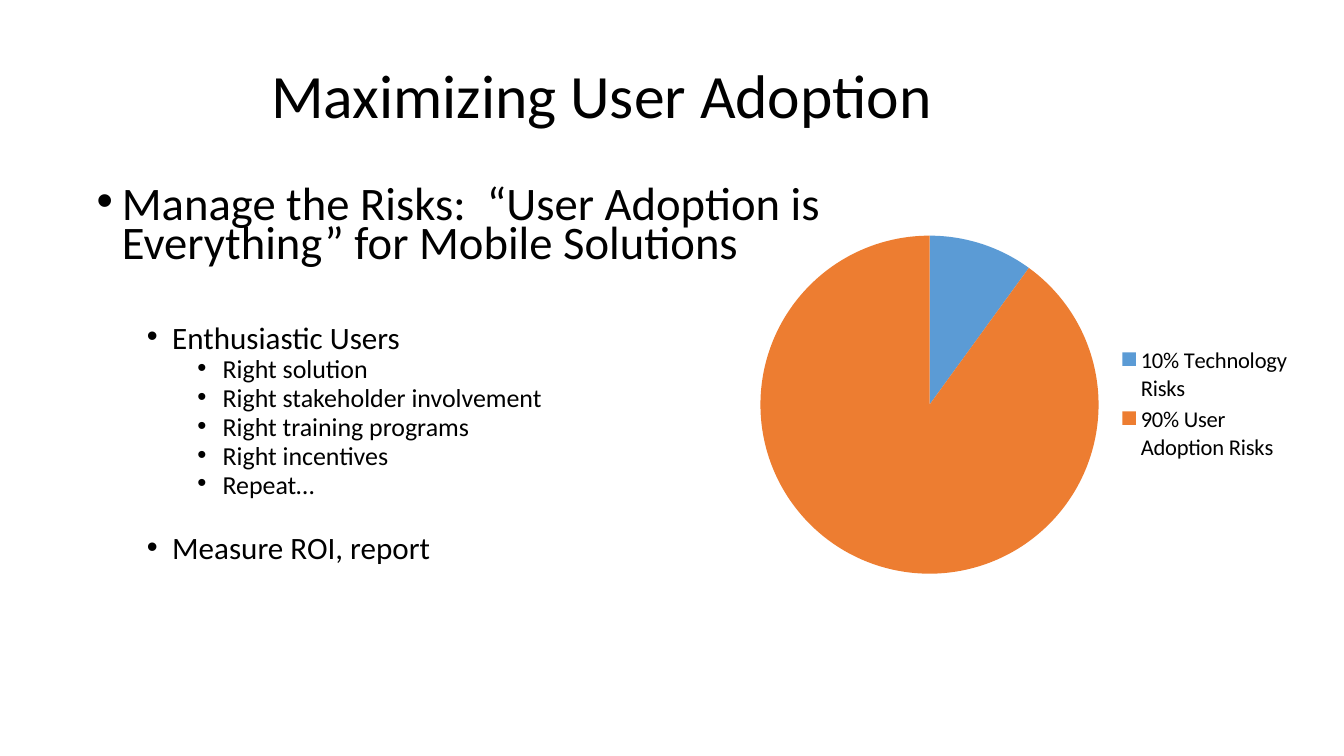
from pptx import Presentation
from pptx.chart.data import CategoryChartData
from pptx.dml.color import RGBColor
from pptx.enum.chart import XL_CHART_TYPE, XL_LEGEND_POSITION
from pptx.enum.text import MSO_ANCHOR
from pptx.oxml.ns import qn
from pptx.util import Inches, Pt
from lxml import etree

PIE = XL_CHART_TYPE.PIE
RIGHT = XL_LEGEND_POSITION.RIGHT
MIDDLE = MSO_ANCHOR.MIDDLE
FONT = "Calibri"
BLACK = "000000"

# Level: text size, space before (points)
LEVELS = [(33.3, 10), (22.2, 5), (18.5, 5)]

# Level, text, extra space before (points)
POINTS = [
    (0, "Manage the Risks:  “User Adoption is Everything” for Mobile Solutions", 0),
    (1, "Enthusiastic Users", 38.4),
    (2, "Right solution", 0),
    (2, "Right stakeholder involvement", 0),
    (2, "Right training programs", 0),
    (2, "Right incentives", 0),
    (2, "Repeat…", 0),
    (1, "Measure ROI, report", 24),
]

# Category, value, colour
RISKS = [
    ("10% Technology Risks", 10, "5B9BD5"),
    ("90% User Adoption Risks", 90, "ED7D31"),
]


def color(hex_value):
    return RGBColor.from_string(hex_value)


def set_font(font, size):
    font.name = FONT
    font.size = Pt(size)
    font.color.rgb = color(BLACK)


def add_text_frame(slide, box):
    tf = slide.shapes.add_textbox(*map(Inches, box)).text_frame
    tf.word_wrap = True
    return tf


def set_indent(p, left, first=0.0):
    pPr = p._p.get_or_add_pPr()
    pPr.set("marL", str(Inches(left)))
    pPr.set("indent", str(Inches(first)))
    return pPr


def add_title(slide, box, text):
    tf = add_text_frame(slide, box)
    tf.vertical_anchor = MIDDLE
    p = tf.paragraphs[0]
    p.text = text
    p.line_spacing = 0.9
    set_font(p.font, 44)
    set_indent(p, 2)


def add_bullets(slide, box, points):
    tf = add_text_frame(slide, box)
    for i, (level, text, gap) in enumerate(points):
        p = tf.paragraphs[0] if i == 0 else tf.add_paragraph()
        size, before = LEVELS[level]
        p.text = text
        p.level = level
        p.line_spacing = 0.7
        p.space_before = Pt(before + gap)
        set_font(p.font, size)
        pPr = set_indent(p, 0.25 + 0.5 * level, -0.25)
        bullet_font = etree.Element(qn("a:buFont"), typeface="Arial")
        bullet = etree.Element(qn("a:buChar"), char="•")
        for element in (bullet_font, bullet):
            pPr.insert_element_before(element, "a:tabLst", "a:defRPr", "a:extLst")


def add_risk_pie(slide, box, risks):
    data = CategoryChartData()
    data.categories = [name for name, _, _ in risks]
    data.add_series("Series 1", [value for _, value, _ in risks])
    chart = slide.shapes.add_chart(PIE, *map(Inches, box), data).chart
    chart.has_title = False
    set_font(chart.font, 16.1)
    chart.has_legend = True
    chart.legend.position = RIGHT
    chart.legend.include_in_layout = False
    plot = chart.plots[0]
    plot.vary_by_categories = True
    for i, (_, _, fill_color) in enumerate(risks):
        fill = plot.series[0].points[i].format.fill
        fill.solid()
        fill.fore_color.rgb = color(fill_color)


def main():
    prs = Presentation()
    prs.slide_width, prs.slide_height = Inches(13.33), Inches(7.5)
    slide = prs.slides.add_slide(prs.slide_layouts[6])
    add_title(slide, (0.59, 0.25, 11.5, 1.45), "Maximizing User Adoption")
    add_bullets(slide, (0.86, 1.83, 8.5, 4.5), POINTS)
    add_risk_pie(slide, (7.38, 2.2, 5.54, 3.63), RISKS)
    prs.save("out.pptx")


if __name__ == "__main__":
    main()
